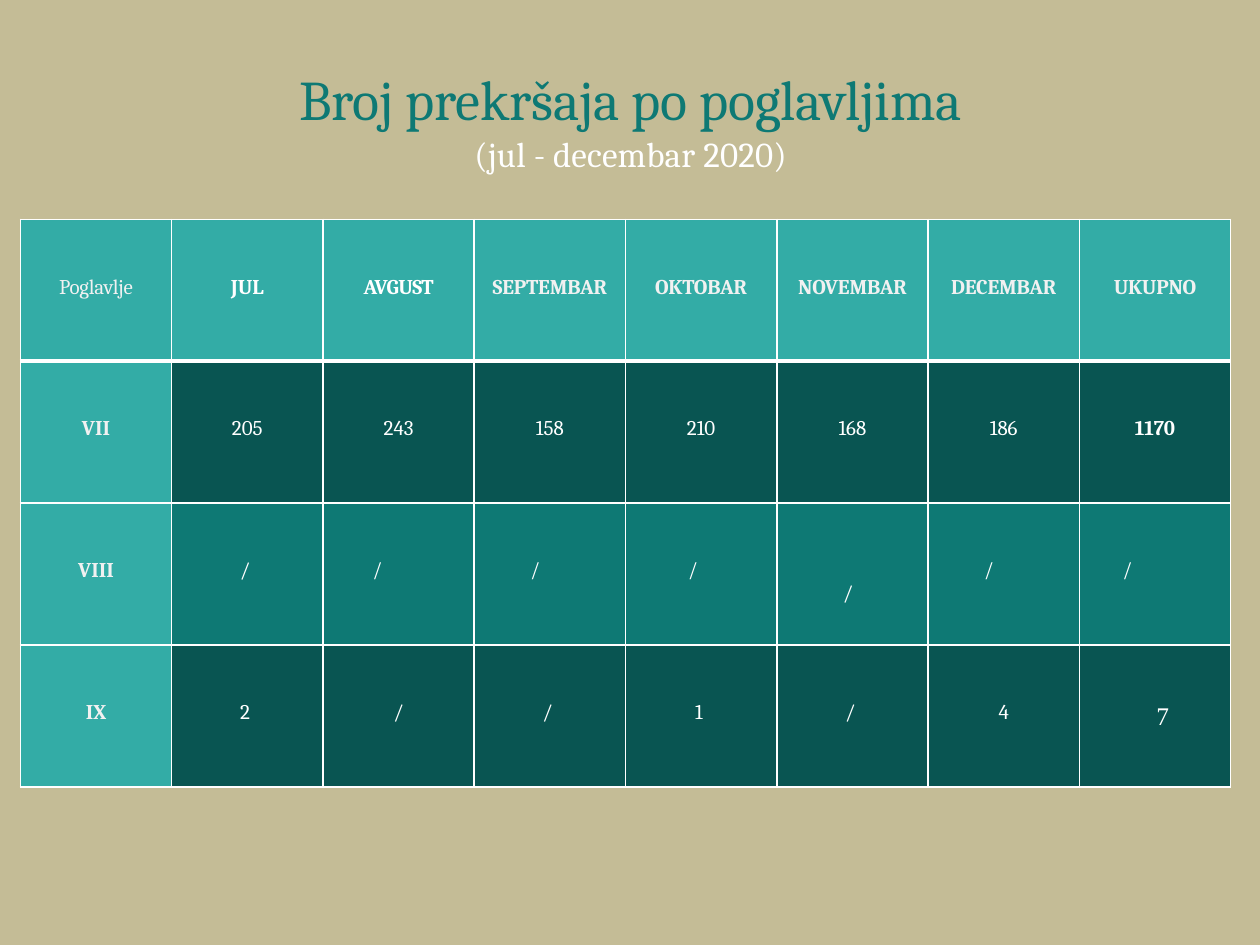
from dataclasses import dataclass

from lxml import etree
from pptx import Presentation
from pptx.dml.color import RGBColor
from pptx.enum.text import MSO_ANCHOR, PP_ALIGN
from pptx.oxml.ns import qn
from pptx.util import Cm, Pt

LEFT, CENTER = PP_ALIGN.LEFT, PP_ALIGN.CENTER
TOP, MIDDLE = MSO_ANCHOR.TOP, MSO_ANCHOR.MIDDLE


@dataclass(frozen=True)
class Theme:
    back: str = "C4BC96"
    teal: str = "0E7974"
    light: str = "33ACA6"
    dark: str = "095552"
    white: str = "FFFFFF"
    pale: str = "F1F1F1"
    font: str = "Cambria"
    alt: str = "Times New Roman"
    head: float = 32
    sub: float = 20
    body: float = 12
    mark: float = 14.5
    line: float = 1
    rule: float = 3


@dataclass(frozen=True)
class Place:
    """Position of a value that is set off from the left of its cell."""
    left: float
    top: float = 0
    font: str = Theme.alt
    size: float = Theme.mark


THEME = Theme()
HEADS = ["Poglavlje", "JUL", "AVGUST", "SEPTEMBAR", "OKTOBAR",
         "NOVEMBAR", "DECEMBAR", "UKUPNO"]
ROWS = [
    HEADS,
    ["VII", "205", "243", "158", "210", "168", "186", "1170"],
    ["VIII", "/ ", "/", "/", "/", "/", "/", "/"],
    ["IX", "2 ", "/", "/ ", "1 ", "/ ", "4", "7"],
]
PLACES = {
    (2, 2): Place(1.03),
    (2, 3): Place(1.16),
    (2, 4): Place(1.29),
    (2, 5): Place(1.33, 0.9, THEME.font, THEME.body),
    (2, 6): Place(1.16),
    (2, 7): Place(0.9),
    (3, 7): Place(1.55, 0.16),
}


def rgb(code):
    return RGBColor.from_string(code)


def add_run(para, text, size, color, font=THEME.font, bold=False, space=0):
    """Add a run; space is the letter spacing in points."""
    run = para.add_run()
    run.text = text
    run.font.size = Pt(size)
    run.font.name = font
    run.font.bold = bold
    run.font.color.rgb = rgb(color)
    if space:
        run.font._element.set("spc", str(round(space * 100)))


def add_title(slide):
    box = slide.shapes.add_textbox(Cm(5.59), Cm(1.27), Cm(14.25), Cm(2.29))
    frame = box.text_frame
    frame.word_wrap = True
    frame.vertical_anchor = TOP
    frame.margin_left = frame.margin_right = frame.margin_bottom = 0
    frame.margin_top = Cm(0.03)

    head = frame.paragraphs[0]
    head.alignment = CENTER
    head.space_before = Pt(0.9)
    add_run(head, "Broj prekršaja po poglavljima", THEME.head, THEME.teal,
            space=-0.1)

    sub = frame.add_paragraph()
    sub.alignment = CENTER
    sub.space_before = Pt(0.3)
    for text, space in (("(jul ", 0.1), ("- ", -0.1), ("decembar 2020)", 0.1)):
        add_run(sub, text, THEME.sub, THEME.white, space=space)


def add_edge(cell, side, width):
    props = cell._tc.get_or_add_tcPr()
    line = etree.SubElement(props, qn(f"a:ln{side}"), w=str(Pt(width)))
    fill = etree.SubElement(line, qn("a:solidFill"))
    etree.SubElement(fill, qn("a:srgbClr"), val=THEME.white)


def cell_fill(row, col):
    if row == 0 or col == 0:
        return THEME.light
    return THEME.dark if row % 2 else THEME.teal


def text_style(row, col):
    """Return colour, weight and letter spacing for a cell."""
    bold = (row == 0) != (col == 0) or (row, col) == (1, 7)
    plain = (row > 0 and col > 0) or (row == 0 and col in (1, 2))
    space = 0
    if row == 0:
        space = -0.3 if col == 2 else -0.1
    elif (row, col) == (1, 7):
        space = -0.1
    return THEME.white if plain else THEME.pale, bold, space


def fill_cell(cell, row, col, text):
    for side in "LRTB":
        thick = (row, side) in ((0, "B"), (1, "T"))
        add_edge(cell, side, THEME.rule if thick else THEME.line)
    cell.fill.solid()
    cell.fill.fore_color.rgb = rgb(cell_fill(row, col))
    cell.vertical_anchor = MIDDLE

    place = PLACES.get((row, col))
    cell.margin_left = Cm(place.left if place else 0)
    cell.margin_top = Cm(place.top if place else 0)
    cell.margin_right = 0
    cell.margin_bottom = Cm(0.12)

    para = cell.text_frame.paragraphs[0]
    para.alignment = LEFT if place else CENTER
    color, bold, space = text_style(row, col)
    add_run(para, text, place.size if place else THEME.body, color,
            place.font if place else THEME.font, bold, space)


def add_grid(slide):
    wide, high = Cm(3.05), Cm(2.86)
    count, span = len(ROWS), len(HEADS)
    table = slide.shapes.add_table(count, span, Cm(0.41), Cm(4.42),
                                   wide * span, high * count).table
    table.first_row = table.horz_banding = False
    for col in table.columns:
        col.width = wide
    for row, texts in enumerate(ROWS):
        table.rows[row].height = high
        for col, text in enumerate(texts):
            fill_cell(table.cell(row, col), row, col, text)


def main():
    deck = Presentation()
    deck.slide_width, deck.slide_height = Cm(25.4), Cm(19.05)
    slide = deck.slides.add_slide(deck.slide_layouts[6])
    fill = slide.background.fill
    fill.solid()
    fill.fore_color.rgb = rgb(THEME.back)
    add_title(slide)
    add_grid(slide)
    deck.save("out.pptx")


if __name__ == "__main__":
    main()
